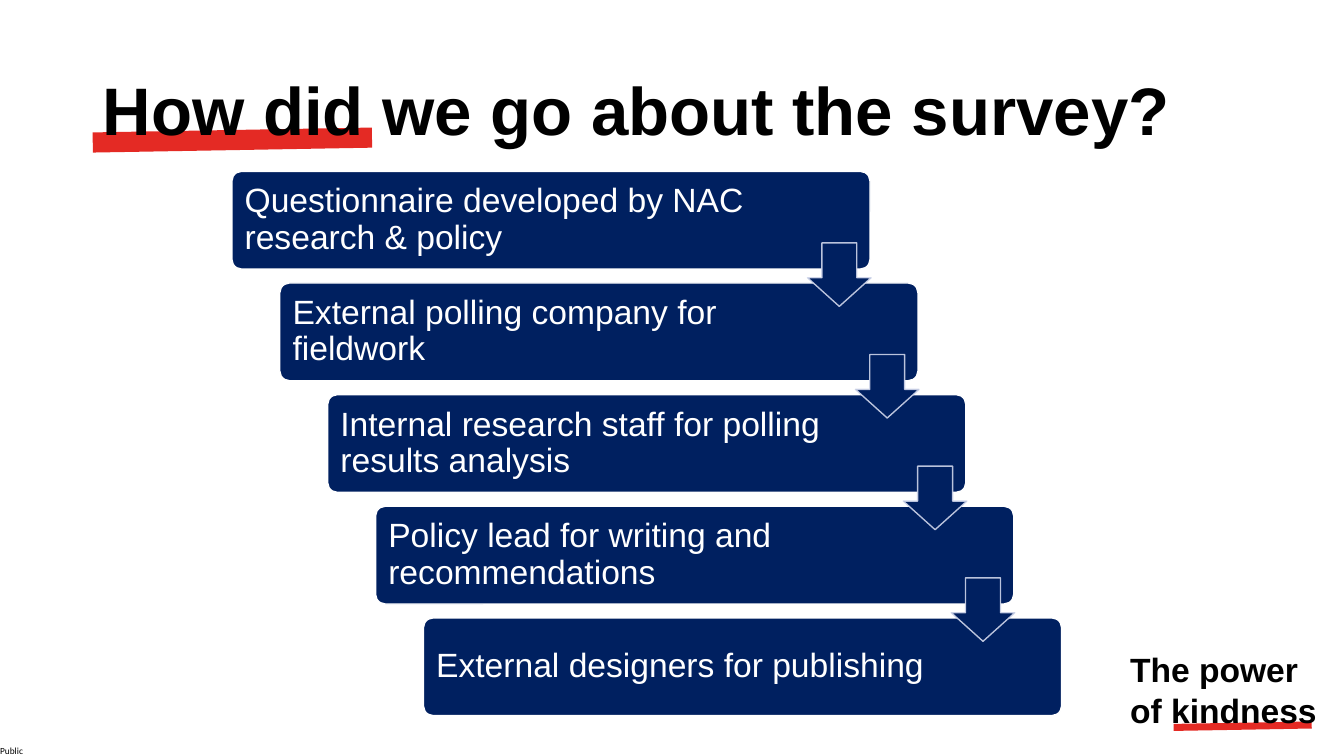
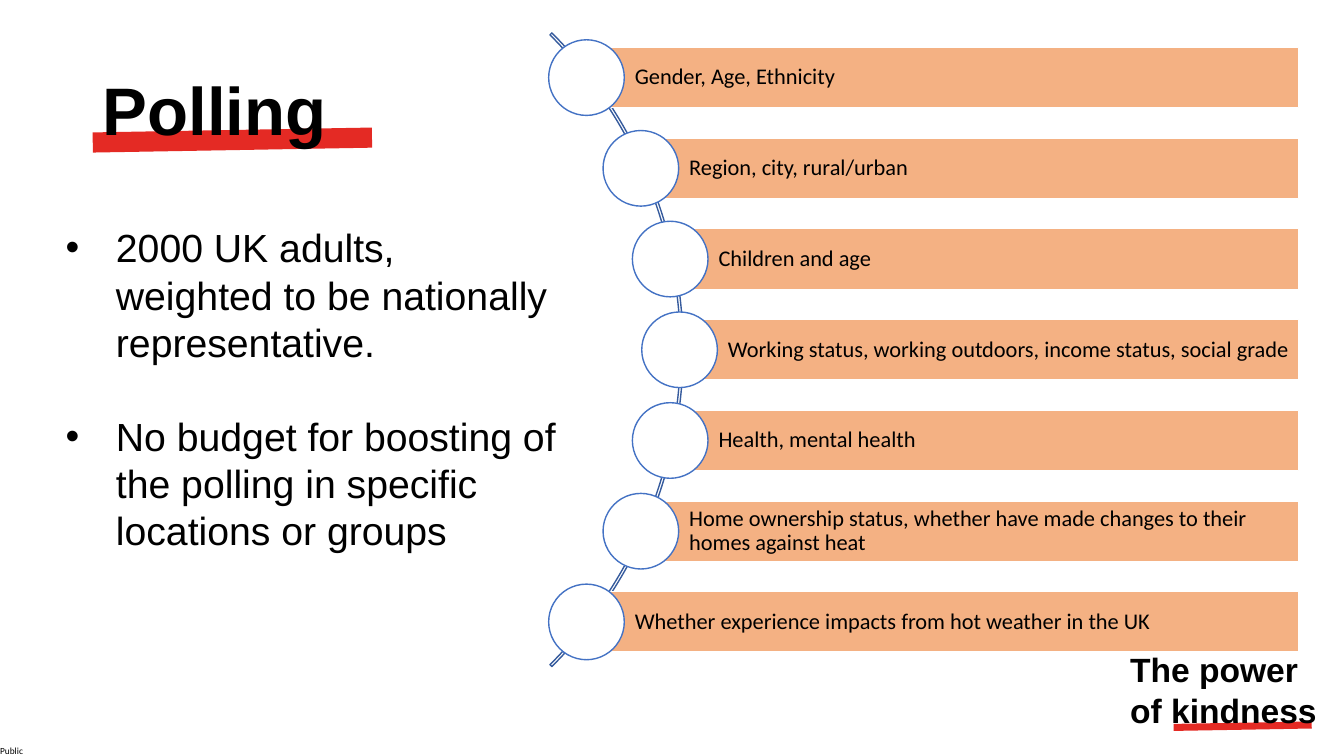
from math import sqrt

from lxml import etree
from pptx import Presentation
from pptx.dml.color import RGBColor
from pptx.enum.shapes import MSO_SHAPE
from pptx.enum.text import MSO_ANCHOR, MSO_AUTO_SIZE, PP_ALIGN
from pptx.oxml.ns import qn
from pptx.util import Inches, Pt

# Content
STEPS = [
    "Questionnaire developed by NAC research & policy",
    "External polling company for fieldwork",
    "Internal research staff for polling results analysis",
    "Policy lead for writing and recommendations",
    "External designers for publishing",
]
POINTS = [
    "2000 UK adults, weighted to be nationally representative.",
    "No budget for boosting of the polling in specific locations or groups",
]
TOPICS = [
    "Gender, Age, Ethnicity",
    "Region, city, rural/urban",
    "Children and age",
    "Working status, working outdoors, income status, social grade",
    "Health, mental health",
    "Home ownership status, whether have made changes to their homes against heat",
    "Whether experience impacts from hot weather in the UK",
]

# Shared style
BLACK, WHITE, RED, NAVY = "000000", "FFFFFF", "E42A24", "002060"
PALE, PEACH, BLUE, STEEL = "CFD5EA", "F4B183", "4472C4", "365B9D"
HEAD, BODY = "Arial", "Calibri"


def paint(target, color):
    target.rgb = RGBColor.from_string(color)


def place(shape, x, y, w, h):
    shape.left, shape.top = Inches(x), Inches(y)
    shape.width, shape.height = Inches(w), Inches(h)


def write(shape, lines, size, font=HEAD, color=BLACK, bold=False,
          pad=(0.1, 0.05, 0.1, 0.05), space=1.0, anchor=MSO_ANCHOR.TOP):
    frame = shape.text_frame
    frame.word_wrap = True
    frame.auto_size = MSO_AUTO_SIZE.NONE
    frame.vertical_anchor = anchor
    frame.margin_left, frame.margin_top, frame.margin_right, frame.margin_bottom = map(Inches, pad)
    for i, line in enumerate(lines):
        para = frame.add_paragraph() if i else frame.paragraphs[0]
        para.alignment = PP_ALIGN.LEFT
        para.line_spacing = space
        para.space_before = Pt(0)
        run = para.add_run()
        run.text = line
        run.font.name, run.font.size, run.font.bold = font, Pt(size), bold
        paint(run.font.color, color)
    return frame


def draw(slide, kind, box, fill=None, line=None, adj=()):
    shape = slide.shapes.add_shape(kind, *map(Inches, box))
    shape.shadow.inherit = False
    for i, value in enumerate(adj):
        shape.adjustments[i] = value
    if fill:
        shape.fill.solid()
        paint(shape.fill.fore_color, fill)
    else:
        shape.fill.background()
    if line:
        shape.line.width = Pt(1)
        paint(shape.line.color, line)
    else:
        shape.line.fill.background()
    return shape


def stroke(slide, box):
    bar = draw(slide, MSO_SHAPE.RECTANGLE, box, RED)
    bar.rotation = -1
    return bar


def label(slide, box, lines, size, **style):
    text = slide.shapes.add_textbox(*map(Inches, box))
    write(text, lines, size, **style)
    return text


def add_frame(slide, master):
    """Draw the common parts once and move them to the master."""
    parts = [
        label(slide, (0, 7.39, 0.25, 0.11), ["Public"], 6.7, font=BODY, pad=(0, 0, 0, 0)),
        stroke(slide, (11.64, 7.17, 1.37, 0.07)),
        label(slide, (11.11, 6.39, 2.07, 0.91), ["The power", "of kindness"], 24, bold=True),
        stroke(slide, (0.92, 1.29, 2.77, 0.2)),
    ]
    tree = master.placeholders[0].element.getparent()
    for i, part in enumerate(parts):
        part.element.xpath(".//p:cNvPr")[0].set("id", str(100 + i))
        tree.append(part.element)


def add_page(deck, layout, title):
    slide = deck.slides.add_slide(deck.slide_layouts[layout])
    place(slide.shapes.title, 0.92, 0.4, 11.5, 1.45)
    write(slide.shapes.title, [title], 48, bold=True, space=0.9, anchor=MSO_ANCHOR.MIDDLE)
    return slide


def add_stairs(slide):
    dx, dy = (4.2 - 2.3) / 4, (6.13 - 1.7) / 4
    for i, step in enumerate(STEPS):
        box = draw(slide, MSO_SHAPE.ROUNDED_RECTANGLE,
                   (2.3 + i * dx, 1.7 + i * dy, 6.33, 0.97), NAVY, WHITE, [0.1])
        write(box, [step], 24, color=WHITE, pad=(0.1, 0.1, 1.2, 0.1),
              space=0.9, anchor=MSO_ANCHOR.MIDDLE)
    for i in range(len(STEPS) - 1):
        arrow = draw(slide, MSO_SHAPE.DOWN_ARROW,
                     (8.01 + i * dx, 2.41 + i * dy, 0.63, 0.63), NAVY, PALE, [0.55, 0.45])
        tint = arrow.line.fill.fore_color and arrow.element.xpath(".//a:ln//a:srgbClr")[0]
        etree.SubElement(tint, qn("a:alpha")).set("val", "90000")


def add_points(slide):
    body = slide.placeholders[1]
    place(body, 0.55, 2.17, 5.12, 3.87)
    frame = write(body, POINTS, 28)
    for para in frame.paragraphs:
        para.space_after = Pt(33.6)
        props = para._p.get_or_add_pPr()
        props.set("marL", str(Inches(0.5)))
        props.set("indent", str(-Inches(0.5)))
        etree.SubElement(props, qn("a:buFont")).set("typeface", HEAD)
        etree.SubElement(props, qn("a:buChar")).set("char", "•")


def add_curve(slide):
    # Circles sit on an arc; each bar starts at its circle's centre
    mid_x, mid_y, reach, gap = 2.33, 3.47, 4.41, 0.9
    bar, dot, right, arc = 0.6, 0.75, 12.88, 8.89
    draw(slide, MSO_SHAPE.BLOCK_ARC, (mid_x - arc / 2, mid_y - arc / 2, arc, arc),
         line=STEEL, adj=[189, 27, 0.003])
    for i, topic in enumerate(TOPICS):
        drop = (i - len(TOPICS) // 2) * gap
        x, y = mid_x + sqrt(reach ** 2 - drop ** 2), mid_y + drop
        strip = draw(slide, MSO_SHAPE.RECTANGLE, (x, y - bar / 2, right - x, bar), PEACH, WHITE)
        write(strip, [topic], 16, font=BODY, pad=(0.48, 0.04, 0.04, 0.04),
              space=0.9, anchor=MSO_ANCHOR.MIDDLE)
        draw(slide, MSO_SHAPE.OVAL, (x - dot / 2, y - dot / 2, dot, dot), WHITE, BLUE)


def main():
    deck = Presentation()
    deck.slide_width, deck.slide_height = Inches(13.33), Inches(7.5)

    # Survey steps
    survey = add_page(deck, 5, "How did we go about the survey?")
    add_frame(survey, deck.slide_master)
    add_stairs(survey)

    # Polling sample
    poll = add_page(deck, 1, "Polling")
    add_points(poll)
    add_curve(poll)

    deck.save("out.pptx")


if __name__ == "__main__":
    main()
